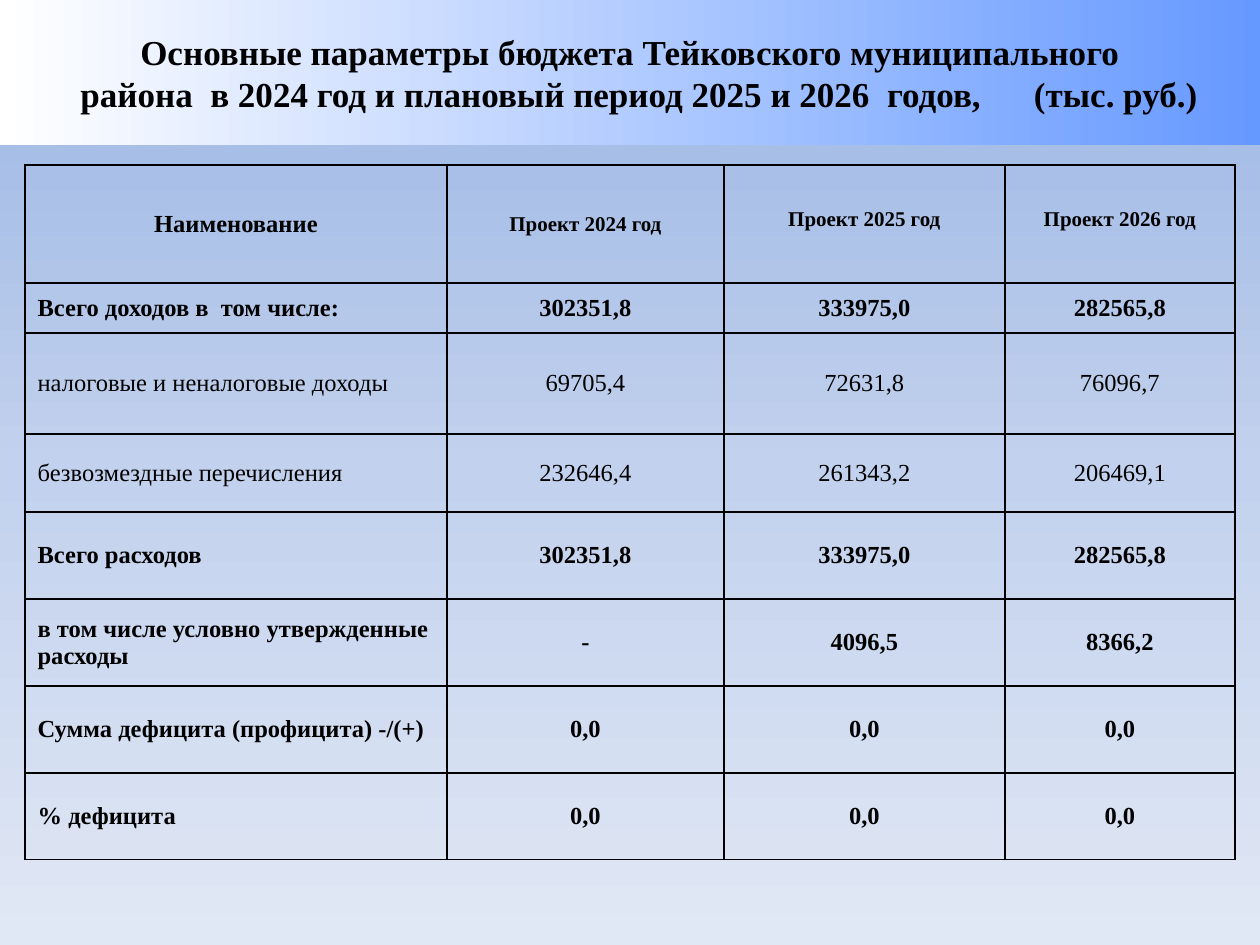
from copy import deepcopy
from pptx import Presentation, util as u
from pptx.dml.color import RGBColor
from pptx.enum import shapes, text
from pptx.oxml import parse_xml
from pptx.oxml.ns import nsdecls

FONT = "Times New Roman"
INK = "000000"
TITLE = [
    "Основные параметры бюджета Тейковского муниципального",
    "района  в 2024 год и плановый период 2025 и 2026  годов,",
]
UNIT = "(тыс. руб.)"
COLS = [422, 277, 281, 230]
ROWS = [118, 50, 101, 78] + [87] * 4
HEAD = ["Наименование", "Проект 2024 год", "Проект 2025 год", "Проект 2026 год"]
BODY = [
    ["Всего доходов в  том числе:", "302351,8", "333975,0", "282565,8"],
    ["налоговые и неналоговые доходы", "69705,4", "72631,8", "76096,7"],
    ["безвозмездные перечисления", "232646,4", "261343,2", "206469,1"],
    ["Всего расходов", "302351,8", "333975,0", "282565,8"],
    ["в том числе условно утвержденные расходы", "-", "4096,5", "8366,2"],
    ["Сумма дефицита (профицита) -/(+)", "0,0", "0,0", "0,0"],
    ["% дефицита", "0,0", "0,0", "0,0"],
]
PLAIN = (2, 3)  # rows set in regular weight


def px(n):
    return u.Emu(round(n * 914400 / 126))


def color(code):
    return RGBColor.from_string(code)


def blend(fill, codes, angle):
    """Fill with evenly spaced gradient stops."""
    fill.gradient()
    first = fill.gradient_stops[0]._gs
    for _ in codes[2:]:
        first.addnext(deepcopy(first))
    for i, (stop, code) in enumerate(zip(fill.gradient_stops, codes)):
        stop.position = i / (len(codes) - 1)
        stop.color.rgb = color(code)
    fill.gradient_angle = angle


def style(par, size, bold=True, align=text.PP_ALIGN.CENTER):
    par.alignment = align
    for run in par.runs:
        font = run.font
        font.name, font.size, font.bold = FONT, u.Pt(size), bold
        font.color.rgb = color(INK)


def border(cell):
    props = cell._tc.get_or_add_tcPr()
    for i, side in enumerate("LRTB"):
        props.insert(i, parse_xml(
            f'<a:ln{side} {nsdecls("a")} w="12700"><a:solidFill>'
            f'<a:srgbClr val="{INK}"/></a:solidFill></a:ln{side}>'))


def banner(slide, x, y, w, h):
    box = slide.shapes.add_shape(
        shapes.MSO_SHAPE.RECTANGLE, px(x), px(y), px(w), px(h))
    box.shadow.inherit = False
    box.line.fill.background()
    blend(box.fill, ["FFFFFF", "6699FF"], 0)
    frame = box.text_frame
    frame.word_wrap = True
    frame.vertical_anchor = text.MSO_ANCHOR.MIDDLE
    frame.text = "\n".join(TITLE)
    # One widely tracked space sets the unit apart
    last = frame.paragraphs[1]
    last._p.get_or_add_pPr().set("marL", str(px(18)))
    gap, unit = last.add_run(), last.add_run()
    gap.text, unit.text = " ", UNIT
    gap._r.get_or_add_rPr().set("spc", "2500")
    for par in frame.paragraphs:
        style(par, 20)


def budget(slide, x, y, w, h):
    data = [HEAD] + BODY
    grid = slide.shapes.add_table(
        len(data), len(HEAD), px(x), px(y), px(w), px(h)).table
    grid.first_row = grid.horz_banding = False
    for col, size in zip(grid.columns, COLS):
        col.width = px(size)
    for row, size in zip(grid.rows, ROWS):
        row.height = px(size)
    for r, line in enumerate(data):
        for c, word in enumerate(line):
            cell = grid.cell(r, c)
            cell.fill.background()
            border(cell)
            cell.text = word
            cell.vertical_anchor = text.MSO_ANCHOR.MIDDLE
            # The two later years sit above the middle of the header
            if r == 0 and c > 1:
                cell.vertical_anchor = text.MSO_ANCHOR.BOTTOM
                cell.margin_bottom = px(52)
            left = r > 0 and c == 0
            style(cell.text_frame.paragraphs[0],
                  12 if r == 0 and c else 14, r not in PLAIN,
                  text.PP_ALIGN.LEFT if left else text.PP_ALIGN.CENTER)


def main():
    deck = Presentation()
    deck.slide_width, deck.slide_height = px(1260), px(945)
    slide = deck.slides.add_slide(deck.slide_layouts[6])
    # Backdrop
    blend(slide.background.fill, ["9AB5E4", "C2D1ED", "E1E8F5"], 270)
    # Title band and table
    banner(slide, 0, 0, 1260, 145)
    budget(slide, 25, 165, sum(COLS), sum(ROWS))
    deck.save("out.pptx")


if __name__ == "__main__":
    main()
